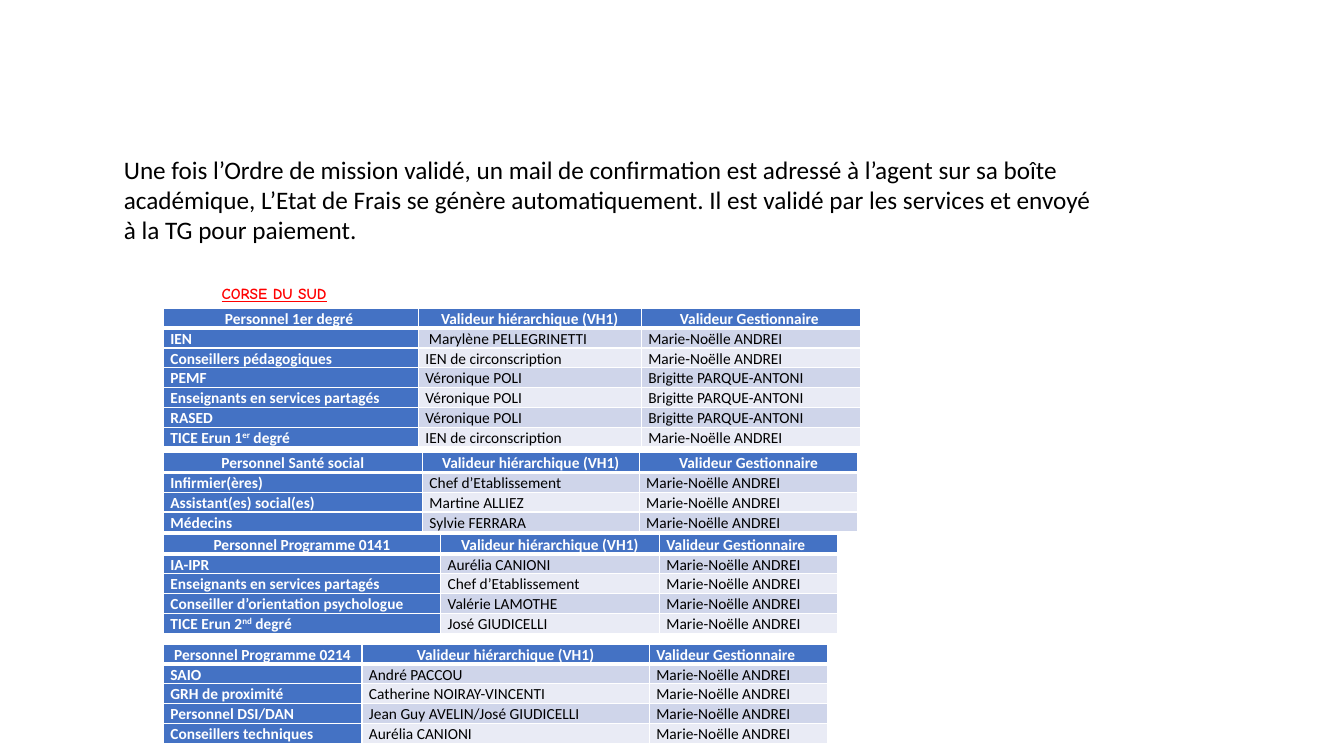
from dataclasses import dataclass

from lxml import etree
from pptx import Presentation
from pptx.dml.color import RGBColor
from pptx.enum.text import MSO_AUTO_SIZE, PP_ALIGN
from pptx.oxml.ns import qn
from pptx.util import Inches, Pt

FIT = MSO_AUTO_SIZE.SHAPE_TO_FIT_TEXT
CENTER, LEFT = PP_ALIGN.CENTER, PP_ALIGN.LEFT


@dataclass(frozen=True)
class Theme:
    """Colours, fonts and type sizes of the slide."""
    black: str = "000000"
    white: str = "FFFFFF"
    red: str = "FF0000"
    blue: str = "4472C4"
    bands: tuple = ("CFD5EA", "E9EBF5")
    font: str = "Calibri"
    comic: str = "Comic Neue"
    body: int = 18
    small: int = 11


THEME = Theme()
ROW = 0.19
LEAD = 1.07
HEAD = "Valideur hiérarchique (VH1)"
MANAGER = "Valideur Gestionnaire"
MARIE = "Marie-Noëlle ANDREI"
BRIGITTE = "Brigitte PARQUE-ANTONI"
VERO = "Véronique POLI"
IEN = "IEN de circonscription"
CHIEF = "Chef d’Etablissement"
SHARED = "Enseignants en services partagés"
INTRO = ("Une fois l’Ordre de mission validé, un mail de confirmation est "
         "adressé à l’agent sur sa boîte académique, L’Etat de Frais se génère "
         "automatiquement. Il est validé par les services et envoyé à la TG "
         "pour paiement.")

TABLES = [
    (3.06, (2.53, 2.21, 2.18), CENTER, [
        ("Personnel 1er degré ", HEAD, MANAGER + " "),
        ("IEN", " Marylène PELLEGRINETTI\u00a0", MARIE),
        ("Conseillers pédagogiques", IEN, MARIE),
        ("PEMF", VERO, BRIGITTE),
        (SHARED, VERO, BRIGITTE),
        ("RASED", VERO, BRIGITTE),
        ("TICE Erun 1^er^ degré", IEN, MARIE)]),
    (4.49, (2.57, 2.15, 2.17), CENTER, [
        ("Personnel Santé social", HEAD, MANAGER),
        ("Infirmier(ères)", CHIEF, MARIE),
        ("Assistant(es) social(es)", "Martine ALLIEZ", MARIE),
        ("Médecins", "Sylvie FERRARA", MARIE)]),
    (5.3, (2.75, 2.17, 1.77), LEFT, [
        ("Personnel Programme 0141", HEAD, MANAGER),
        ("IA-IPR", "Aurélia CANIONI", MARIE),
        (SHARED, CHIEF, MARIE),
        ("Conseiller d’orientation psychologue", "Valérie LAMOTHE", MARIE),
        ("TICE Erun 2^nd^ degré", "José GIUDICELLI", MARIE)]),
    (6.39, (1.97, 2.85, 1.77), LEFT, [
        ("Personnel Programme 0214", HEAD, MANAGER),
        ("SAIO", "André PACCOU", MARIE),
        ("GRH de proximité", "Catherine NOIRAY-VINCENTI", MARIE),
        ("Personnel DSI/DAN", "Jean Guy AVELIN/José GIUDICELLI", MARIE),
        ("Conseillers techniques", "Aurélia CANIONI", MARIE)]),
]


def style(para, size, color, bold=False, name=THEME.font):
    """Set the font of a paragraph."""
    font = para.font
    font.name, font.size, font.bold = name, Pt(size), bold
    font.color.rgb = RGBColor.from_string(color)


def add_text(slide, box, text):
    """Place a text box and return its paragraph."""
    frame = slide.shapes.add_textbox(*map(Inches, box)).text_frame
    frame.word_wrap = True
    frame.auto_size = FIT
    para = frame.paragraphs[0]
    para.text = text
    return para


def add_intro(slide, box):
    """Place the opening paragraph."""
    style(add_text(slide, box, INTRO), THEME.body, THEME.black)


def add_label(slide, box):
    """Place the underlined name of the area."""
    para = add_text(slide, box, "CORSE DU SUD")
    style(para, THEME.small, THEME.red, True, THEME.comic)
    para.font.underline = True


def add_edges(cell, row):
    """Draw white cell borders, thick under the header."""
    widths = {"lnL": 1, "lnR": 1, "lnT": 3 if row == 1 else 1,
              "lnB": 3 if row == 0 else 1}
    props = cell._tc.get_or_add_tcPr()
    for spot, (tag, width) in enumerate(widths.items()):
        line = etree.Element(qn("a:" + tag), w=str(Pt(width)))
        fill = etree.SubElement(line, qn("a:solidFill"))
        etree.SubElement(fill, qn("a:srgbClr"), val=THEME.white)
        props.insert(spot, line)


def fill_cell(cell, text, row, col, align):
    """Write and paint one cell; carets enclose raised text."""
    strong = row == 0 or col == 0
    cell.margin_left = cell.margin_right = Inches(0.07)
    cell.margin_top = cell.margin_bottom = 0
    cell.fill.solid()
    shade = THEME.blue if strong else THEME.bands[(row - 1) % 2]
    cell.fill.fore_color.rgb = RGBColor.from_string(shade)
    para = cell.text_frame.paragraphs[0]
    para.alignment, para.line_spacing = align, LEAD
    style(para, THEME.small, THEME.white if strong else THEME.black, strong)
    for part, piece in enumerate(text.split("^")):
        run = para.add_run()
        run.text = piece
        if part % 2:
            run._r.get_or_add_rPr().set("baseline", "30000")
    add_edges(cell, row)


def add_grid(slide, left, top, widths, last, rows):
    """Place a table; last aligns its final heading."""
    size = (sum(widths), ROW * len(rows))
    table = slide.shapes.add_table(len(rows), len(widths), Inches(left),
                                   Inches(top), *map(Inches, size)).table
    table.first_col = True
    for col, width in enumerate(widths):
        table.columns[col].width = Inches(width)
    for r, texts in enumerate(rows):
        table.rows[r].height = Inches(ROW)
        aligns = (CENTER, CENTER, last) if r == 0 else (LEFT,) * 3
        for c, (text, align) in enumerate(zip(texts, aligns)):
            fill_cell(table.cell(r, c), text, r, c, align)


def main():
    """Build the slide and save it."""
    deck = Presentation()
    deck.slide_width, deck.slide_height = Inches(13.33), Inches(7.5)
    slide = deck.slides.add_slide(deck.slide_layouts[6])
    add_intro(slide, (1.13, 1.48, 9.95, 1.01))
    add_label(slide, (2.1, 2.77, 11.23, 0.59))
    for top, widths, last, rows in TABLES:
        add_grid(slide, 1.62, top, widths, last, rows)
    deck.save("out.pptx")


if __name__ == "__main__":
    main()
